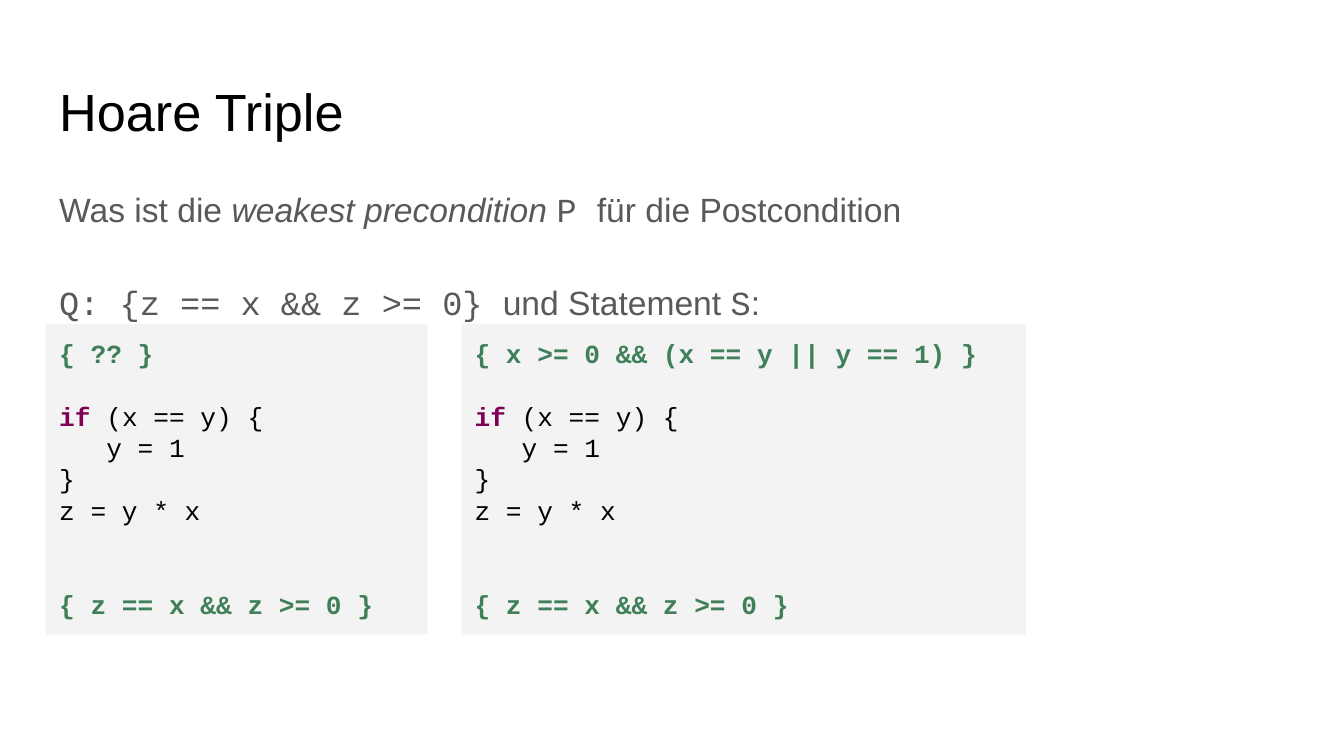
from pptx import Presentation
from pptx.dml.color import RGBColor
from pptx.enum.shapes import MSO_SHAPE
from pptx.enum.text import MSO_ANCHOR, PP_ALIGN
from pptx.util import Cm, Pt

RECT = MSO_SHAPE.RECTANGLE
TOP = MSO_ANCHOR.TOP
LEFT = PP_ALIGN.LEFT

COLORS = {
    "title": "000000",
    "body": "595959",
    "code": "000000",
    "keyword": "7F0055",
    "condition": "3F7F59",
    "panel": "F3F3F3",
}
SANS, MONO = "Arial", "Courier New"
CODE_LINE = 16.8  # points per line of code


class Deck:
    """Holds the style and the current slide."""

    inset = Cm(0.25)
    formats = {
        "title": {"name": SANS, "size": Pt(28)},
        "body": {"name": SANS, "size": Pt(18)},
        "code": {"name": MONO, "size": Pt(14)},
        "keyword": {"name": MONO, "size": Pt(14), "bold": True},
        "condition": {"name": MONO, "size": Pt(14), "bold": True},
    }

    def __init__(self, prs):
        self.s = prs.slides.add_slide(prs.slide_layouts[6])

    def frame(self, sp):
        tf = sp.text_frame
        layout = {"word_wrap": True, "vertical_anchor": TOP}
        for side in ("left", "top", "right", "bottom"):
            layout[f"margin_{side}"] = self.inset
        for key, value in layout.items():
            setattr(tf, key, value)
        return tf

    def paragraph(self, tf, first, runs, **spacing):
        p = tf.paragraphs[0] if first else tf.add_paragraph()
        p.alignment = LEFT
        for key, value in spacing.items():
            setattr(p, key, value)
        for text, style, changes in runs:
            r = p.add_run()
            r.text = text
            for key, value in {**self.formats[style], **changes}.items():
                setattr(r.font, key, value)
            r.font.color.rgb = RGBColor.from_string(COLORS[style])
        return p

    def text(self, box, paragraphs, **spacing):
        tf = self.frame(self.s.shapes.add_textbox(*map(Cm, box)))
        for i, runs in enumerate(paragraphs):
            self.paragraph(tf, i == 0, runs, **spacing)

    def code(self, box, lines):
        sp = self.s.shapes.add_shape(RECT, *map(Cm, box))
        sp.shadow.inherit = False
        sp.fill.solid()
        sp.fill.fore_color.rgb = RGBColor.from_string(COLORS["panel"])
        sp.line.fill.background()
        tf = self.frame(sp)
        for i, (blank_lines, indent, runs) in enumerate(lines):
            p = self.paragraph(
                tf, i == 0, [(text, style, {}) for text, style in runs],
                line_spacing=Pt(CODE_LINE),
                space_before=Pt(CODE_LINE * blank_lines),
            )
            p._p.get_or_add_pPr().set("marL", str(Cm(indent)))


def main():
    prs = Presentation()
    prs.slide_width, prs.slide_height = Cm(25.4), Cm(14.28)
    deck = Deck(prs)

    # Title
    deck.text((0.87, 1.24, 23.67, 1.6), [[("Hoare Triple", "title", {})]])

    # Question
    mono = {"name": MONO}
    question = [
        [
            ("Was ist die ", "body", {}),
            ("weakest precondition ", "body", {"italic": True}),
            ("P ", "body", mono),
            ("für die Postcondition", "body", {}),
        ],
        [
            ("Q: {z == x && z >= 0} ", "body", mono),
            ("und Statement ", "body", {}),
            ("S", "body", mono),
            (":", "body", {}),
        ],
    ]
    deck.text((0.87, 3.2, 23.67, 2.18), question,
              line_spacing=1.15, space_after=Pt(25))

    # Code panels: the same program, first without and then with its precondition
    program = [
        (1, 0, [("if", "keyword"), (" (x == y) {", "code")]),
        (0, 0.89, [("y = 1", "code")]),
        (0, 0, [("}", "code")]),
        (0, 0, [("z = y * x", "code")]),
        (2, 0, [("{ z == x && z >= 0 }", "condition")]),
    ]
    panels = [
        (0.87, 7.21, "{ ?? }"),
        (8.72, 10.67, "{ x >= 0 && (x == y || y == 1) }"),
    ]
    for left, width, precondition in panels:
        deck.code((left, 6.12, width, 5.87),
                  [(0, 0, [(precondition, "condition")])] + program)

    prs.save("out.pptx")


if __name__ == "__main__":
    main()
